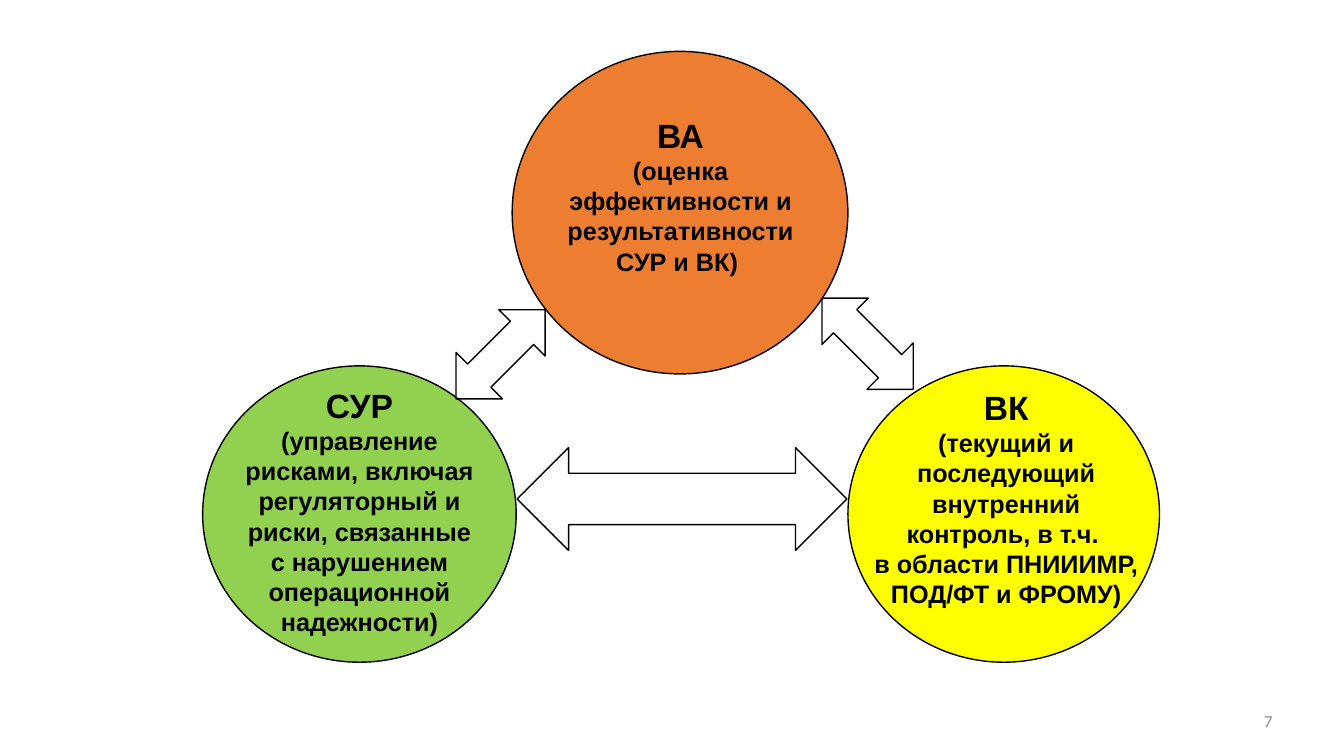
from dataclasses import dataclass

from pptx import Presentation
from pptx.dml.color import RGBColor
from pptx.enum.shapes import MSO_SHAPE
from pptx.enum.text import MSO_ANCHOR, MSO_AUTO_SIZE, PP_ALIGN
from pptx.util import Emu, Pt

PX = 9144  # EMU per px, 100 px to the inch
COLORS = {
    "green": "92D050",
    "orange": "ED7D31",
    "yellow": "FFFF00",
    "black": "000000",
    "gray": "8C8C8C",
}


@dataclass(frozen=True)
class Box:
    left: int
    top: int
    width: int
    height: int

    def emu(self) -> list[Emu]:
        return [Emu(n * PX) for n in (self.left, self.top, self.width, self.height)]


@dataclass(frozen=True)
class Function:
    circle: Box
    color: str
    label: Box
    title: str
    details: tuple[str, ...]


@dataclass(frozen=True)
class Arrow:
    box: Box
    kind: MSO_SHAPE
    rotation: int = 0


FUNCTIONS = [
    Function(Box(201, 363, 311, 294), "green", Box(232, 377, 249, 263), "СУР",
             ("(управление рисками, включая регуляторный и риски, связанные "
              "с нарушением операционной надежности)",)),
    Function(Box(508, 51, 333, 320), "orange", Box(551, 109, 248, 172), "ВА",
             ("(оценка эффективности и результативности", "СУР и ВК) ")),
    Function(Box(841, 363, 309, 294), "yellow", Box(856, 379, 284, 232), "ВК",
             ("(текущий и последующий внутренний контроль, в т.ч. ",
              "в области ПНИИИМР, ПОД/ФТ и ФРОМУ)")),
]
ARROWS = [
    Arrow(Box(513, 444, 327, 102), MSO_SHAPE.LEFT_RIGHT_ARROW),
    Arrow(Box(464, 289, 65, 125), MSO_SHAPE.UP_DOWN_ARROW, 45),
    Arrow(Box(828, 277, 65, 128), MSO_SHAPE.UP_DOWN_ARROW, 135),
]
PAGE_NUMBER = Box(942, 695, 330, 40)


def draw_shape(page, kind: MSO_SHAPE, box: Box, color: str | None = None,
               rotation: int = 0) -> None:
    shape = page.shapes.add_shape(kind, *box.emu())
    shape.shadow.inherit = False
    shape.rotation = rotation
    if color:
        shape.fill.solid()
        shape.fill.fore_color.rgb = RGBColor.from_string(COLORS[color])
    else:
        shape.fill.background()
    shape.line.color.rgb = RGBColor.from_string(COLORS["black"])
    shape.line.width = Pt(1)


def add_text(page, box: Box, lines: list[str], sizes: list[int], font: str,
             color: str, align: PP_ALIGN, bold: bool = False):
    frame = page.shapes.add_textbox(*box.emu()).text_frame
    frame.text = "\n".join(lines)
    frame.word_wrap = True
    for para, size in zip(frame.paragraphs, sizes):
        para.alignment = align
        for span in para.runs:
            span.font.name = font
            span.font.size = Pt(size)
            span.font.bold = bold
            span.font.color.rgb = RGBColor.from_string(COLORS[color])
    return frame


def main() -> None:
    deck = Presentation()
    deck.slide_width, deck.slide_height = Emu(1333 * PX), Emu(750 * PX)
    page = deck.slides.add_slide(deck.slide_layouts[6])

    # Page number
    number = add_text(page, PAGE_NUMBER, ["7"], [12], "Calibri", "gray", PP_ALIGN.RIGHT)
    number.vertical_anchor = MSO_ANCHOR.MIDDLE

    # Circles, then their labels
    for function in FUNCTIONS:
        draw_shape(page, MSO_SHAPE.OVAL, function.circle, function.color)
    for function in FUNCTIONS:
        lines = [function.title, *function.details]
        sizes = [24] + [18] * len(function.details)
        label = add_text(page, function.label, lines, sizes, "Arial", "black",
                         PP_ALIGN.CENTER, bold=True)
        label.auto_size = MSO_AUTO_SIZE.SHAPE_TO_FIT_TEXT

    # Two-way arrows between the circles
    for arrow in ARROWS:
        draw_shape(page, arrow.kind, arrow.box, rotation=arrow.rotation)

    deck.save("out.pptx")


if __name__ == "__main__":
    main()
